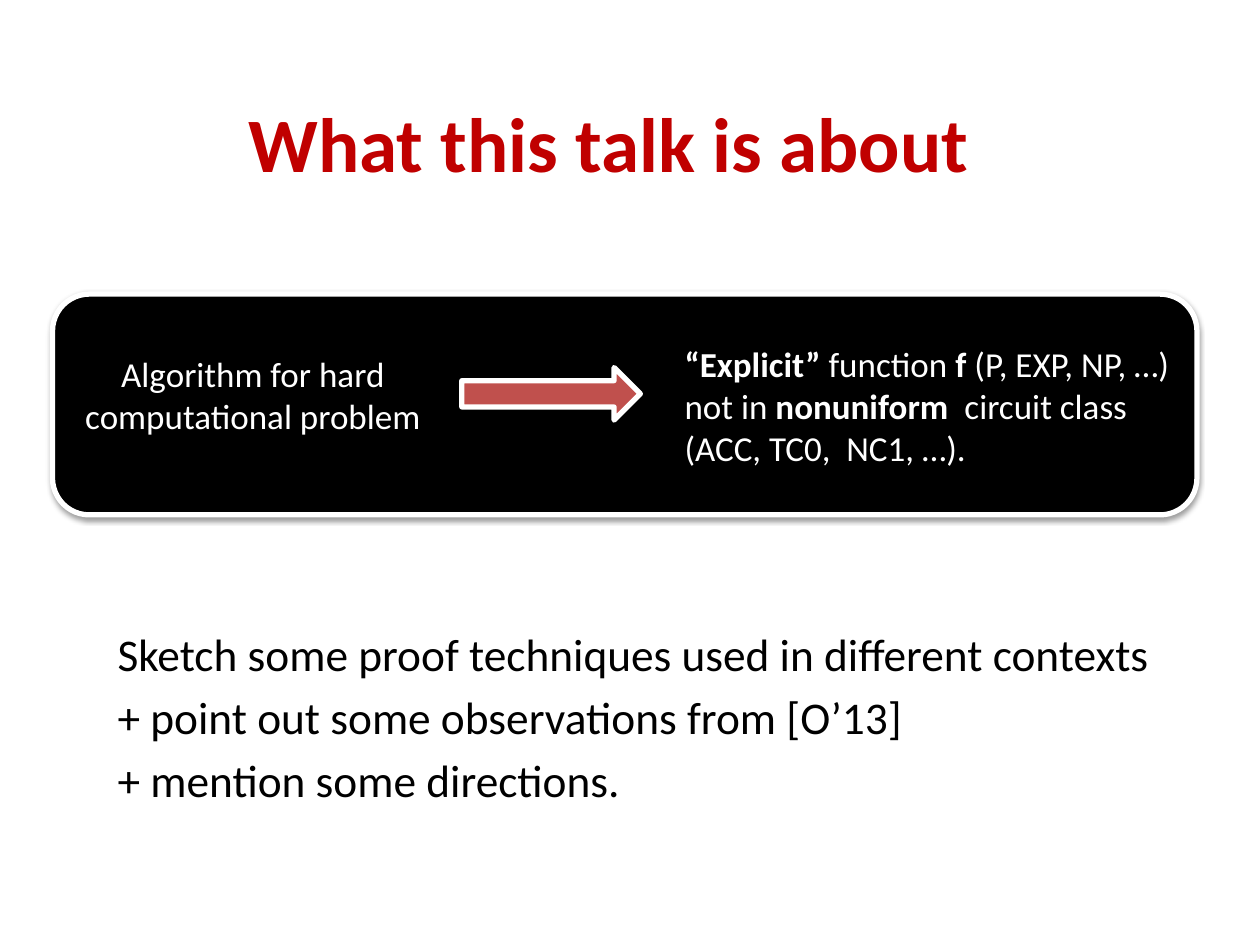
import pptx
import pptx.dml.color
import pptx.enum.shapes
import pptx.enum.text
import pptx.oxml
import pptx.oxml.ns
import pptx.util
from pptx.util import Cm, Pt

FONT = "Calibri"
WHITE, BLACK, DARK_RED, BRICK = "FFFFFF", "000000", "C00000", "C0504D"
SHAPE = pptx.enum.shapes.MSO_SHAPE
ALIGN = pptx.enum.text.PP_ALIGN
ANCHOR = pptx.enum.text.MSO_ANCHOR

# Each paragraph is a list of (text, bold) runs; "\n" is a line break.
TITLE = [[("What this talk is about", True)]]
PREMISE = [[("Algorithm for hard \ncomputational problem ", False)]]
CONCLUSION = [
    [("“Explicit”", True), (" function ", False), ("f", True), (" (P, EXP, NP, …)", False)],
    [("not in ", False), ("nonuniform", True), ("  circuit class", False)],
    [("(ACC, TC0,  NC1, …).", False)],
]
PLAN = [
    [("Sketch some proof techniques used in different contexts", False)],
    [("+ point out some observations from [O’13]", False)],
    [("+ mention some directions.", False)],
]

# Left, top, width, height in centimetres
PANEL = (1.06, 5.93, 23.07, 4.45)
ARROW = (9.31, 7.41, 3.6, 1.06)
TITLE_AREA = (0.85, 1.27, 22.86, 3.18)
PREMISE_AREA = (-0.64, 6.99, 11.64, 1.96)
CONCLUSION_AREA = (13.55, 6.77, 11.01, 2.82)
PLAN_AREA = (2.12, 12.49, 22.86, 4.02)


def color(value):
    return pptx.dml.color.RGBColor.from_string(value)


def add_shadowed_shape(page, kind, area, fill):
    """Add a white-edged shape with a soft shadow below it."""
    shape = page.shapes.add_shape(kind, *map(Cm, area))
    shape.fill.solid()
    shape.fill.fore_color.rgb = color(fill)
    shape.line.color.rgb = color(WHITE)
    shape.line.width = Pt(3)
    shape.shadow.inherit = False
    effects = shape.element.spPr.find(pptx.oxml.ns.qn("a:effectLst"))
    effects.append(pptx.oxml.parse_xml(
        f'<a:outerShdw {pptx.oxml.ns.nsdecls("a")} blurRad="{Pt(3.1)}" dist="{Pt(1.6)}"'
        f' dir="5400000" rotWithShape="0"><a:srgbClr val="{BLACK}">'
        '<a:alpha val="38000"/></a:srgbClr></a:outerShdw>'))


def add_text(page, area, paragraphs, size, ink, align=ALIGN.LEFT,
             anchor=ANCHOR.TOP, space_before=0):
    box = page.shapes.add_textbox(*map(Cm, area))
    frame = box.text_frame
    frame.word_wrap = True
    frame.vertical_anchor = anchor
    for index, runs in enumerate(paragraphs):
        para = frame.add_paragraph() if index else frame.paragraphs[0]
        para.alignment = align
        para.space_before = Pt(space_before)
        for text, bold in runs:
            for number, line in enumerate(text.split("\n")):
                if number:
                    para.add_line_break()
                span = para.add_run()
                span.text = line
                span.font.name = FONT
                span.font.size = Pt(size)
                span.font.bold = bold
                span.font.color.rgb = color(ink)


def main():
    deck = pptx.Presentation()
    deck.slide_width, deck.slide_height = Cm(25.4), Cm(19.05)
    page = deck.slides.add_slide(deck.slide_layouts[6])

    add_text(page, TITLE_AREA, TITLE, 44, DARK_RED, ALIGN.CENTER, ANCHOR.MIDDLE)
    add_text(page, PLAN_AREA, PLAN, 25.9, BLACK, space_before=5)
    add_shadowed_shape(page, SHAPE.ROUNDED_RECTANGLE, PANEL, BLACK)
    add_text(page, PREMISE_AREA, PREMISE, 20, WHITE, ALIGN.CENTER)
    add_shadowed_shape(page, SHAPE.RIGHT_ARROW, ARROW, BRICK)
    add_text(page, CONCLUSION_AREA, CONCLUSION, 20, WHITE)

    deck.save("out.pptx")


if __name__ == "__main__":
    main()
